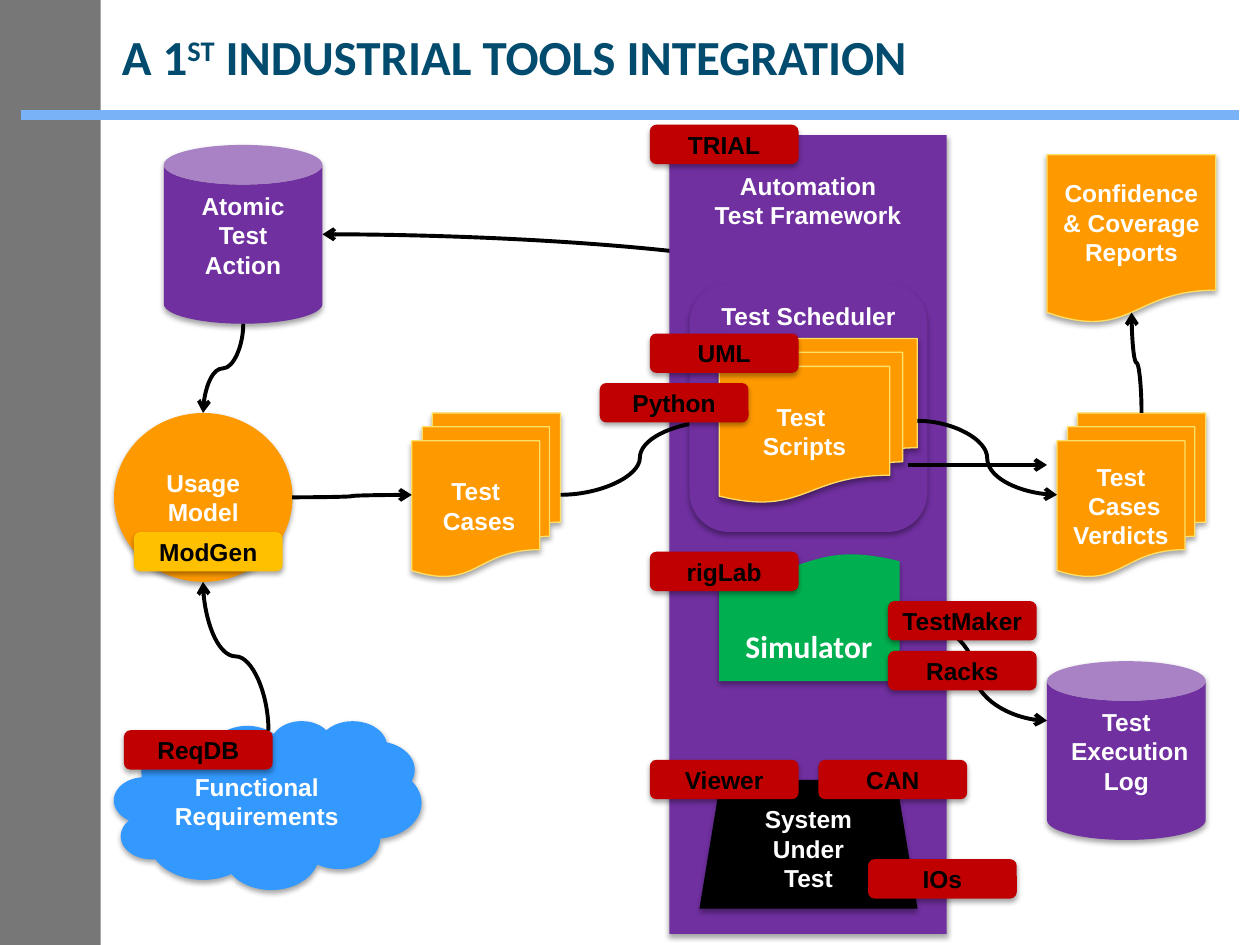
from dataclasses import dataclass
from typing import Optional

import pptx
import pptx.dml.color
import pptx.enum.shapes
import pptx.enum.text
import pptx.oxml.ns
import pptx.util
from lxml import etree

Pt = pptx.util.Pt
Shape = pptx.enum.shapes.MSO_SHAPE
Connector = pptx.enum.shapes.MSO_CONNECTOR
Anchor = pptx.enum.text.MSO_ANCHOR
Align = pptx.enum.text.PP_ALIGN
qn = pptx.oxml.ns.qn


@dataclass(frozen=True)
class Theme:
    sidebar: str = "777777"
    rule: str = "79B2F7"
    title: str = "004B6E"
    purple: str = "7030A0"
    orange: str = "FF9900"
    page_edge: str = "FFE066"
    green: str = "00B050"
    blue: str = "3399FF"
    red: str = "C00000"
    amber: str = "FFC000"
    black: str = "000000"
    white: str = "FFFFFF"
    title_size: float = 28
    simulator_size: float = 18
    label_size: float = 14
    label_font: str = "Arial"
    heading_font: str = "Calibri"


THEME = Theme()


@dataclass(frozen=True)
class Node:
    kind: int
    left: float
    top: float
    width: float
    height: float
    fill: str
    lines: tuple[str, ...] = ()
    edge: Optional[str] = None
    ink: str = THEME.white
    anchor: int = Anchor.MIDDLE
    top_inset: float = 3.6
    rotation: float = 0
    adjustment: Optional[float] = None
    shadow: bool = True


@dataclass(frozen=True)
class Flow:
    start: tuple[float, float]
    end: tuple[float, float]
    vertical: bool = False  # leaves its start vertically
    quarter: bool = False  # a single bend instead of an S


def rgb(color: str) -> pptx.dml.color.RGBColor:
    return pptx.dml.color.RGBColor.from_string(color)


def add_run(paragraph, text: str, size: float, font: str, color: str):
    run = paragraph.add_run()
    run.text = text
    run.font.size = Pt(size)
    run.font.name = font
    run.font.bold = True
    run.font.color.rgb = rgb(color)
    return run


def add_shadow(shape) -> None:
    effects = shape.element.spPr.find(qn("a:effectLst"))
    outer = etree.SubElement(effects, qn("a:outerShdw"), blurRad=str(Pt(3.1)),
                             dist=str(Pt(1.8)), dir="5400000", rotWithShape="0")
    color = etree.SubElement(outer, qn("a:srgbClr"), val=THEME.black)
    etree.SubElement(color, qn("a:alpha"), val="35000")


def draw_node(slide, node: Node) -> None:
    shape = slide.shapes.add_shape(node.kind, Pt(node.left), Pt(node.top),
                                   Pt(node.width), Pt(node.height))
    shape.rotation = node.rotation
    if node.adjustment is not None:
        shape.adjustments[0] = node.adjustment
    shape.fill.solid()
    shape.fill.fore_color.rgb = rgb(node.fill)
    if node.edge:
        shape.line.color.rgb = rgb(node.edge)
        shape.line.width = Pt(0.75)
    else:
        shape.line.fill.background()
    shape.shadow.inherit = False
    if node.shadow:
        add_shadow(shape)
    frame = shape.text_frame
    frame.word_wrap = False
    frame.vertical_anchor = node.anchor
    frame.margin_top = Pt(node.top_inset)
    for index, line in enumerate(node.lines):
        paragraph = frame.paragraphs[0] if index == 0 else frame.add_paragraph()
        paragraph.alignment = Align.CENTER
        add_run(paragraph, line, THEME.label_size, THEME.label_font, node.ink)


def style_line(connector, color: str, width: float) -> None:
    connector.line.color.rgb = rgb(color)
    connector.line.width = Pt(width)
    etree.SubElement(connector.element.spPr, qn("a:effectLst"))


def draw_flow(slide, flow: Flow) -> None:
    (x1, y1), (x2, y2) = flow.start, flow.end
    rotation = 0
    if flow.vertical:
        # A vertical departure is a horizontal curve turned about its centre
        rotation = 90 if y2 > y1 else 270
        center_x, center_y = (x1 + x2) / 2, (y1 + y2) / 2
        half_length, half_rise = abs(y2 - y1) / 2, abs(x2 - x1) / 2
        if (x2 - x1) * (y2 - y1) > 0:
            half_rise = -half_rise
        x1, x2 = center_x - half_length, center_x + half_length
        y1, y2 = center_y - half_rise, center_y + half_rise
    curve = slide.shapes.add_connector(Connector.CURVE, Pt(x1), Pt(y1), Pt(x2), Pt(y2))
    properties = curve.element.spPr
    if rotation:
        properties.find(qn("a:xfrm")).set("rot", str(rotation * 60000))
    if flow.quarter:
        properties.find(qn("a:prstGeom")).set("prst", "curvedConnector2")
    style_line(curve, THEME.black, 2.25)
    outline = properties.find(qn("a:ln"))
    etree.SubElement(outline, qn("a:tailEnd"), type="arrow")


def add_heading(slide, left: float, top: float, width: float, height: float):
    frame = slide.shapes.add_textbox(Pt(left), Pt(top), Pt(width), Pt(height)).text_frame
    frame.word_wrap = True
    frame.vertical_anchor = Anchor.MIDDLE
    return frame.paragraphs[0]


def pages(left: float, top: float, width: float, *lines: str) -> Node:
    return Node(Shape.FLOWCHART_MULTIDOCUMENT, left, top, width, 93.6,
                THEME.orange, lines, edge=THEME.page_edge)


def store(left: float, top: float, *lines: str) -> Node:
    return Node(Shape.CAN, left, top, 90.7, 102.2, THEME.purple, lines, anchor=Anchor.TOP)


def tool(left: float, top: float, name: str, fill: str = THEME.red) -> Node:
    return Node(Shape.ROUNDED_RECTANGLE, left, top, 85, 22.5, fill, (name,), ink=THEME.black)


# Flows that start behind the test framework
HIDDEN_FLOWS = (
    Flow((514, 352), (598.3, 411.8)),
    Flow((462.2, 162), (184.3, 133.9), vertical=True, quarter=True),
)
NODES = (
    Node(Shape.RECTANGLE, 382.5, 77.2, 158.5, 456.5, THEME.purple,
         ("Automation", "Test Framework"), anchor=Anchor.TOP, top_inset=20.5),
    Node(Shape.OVAL, 65.2, 236, 102, 96.5, THEME.orange, ("Usage", "Model")),
    pages(235.3, 236, 85, "Test", " Cases"),
    Node(Shape.FLOWCHART_DOCUMENT, 411, 315.8, 103, 73.4, THEME.green, rotation=180),
    Node(Shape.TRAPEZOID, 399.7, 445.7, 124.6, 73.5, THEME.black,
         ("System", "Under", "Test"), adjustment=0.165),
    store(598.3, 377.8, "Test", " Execution", "Log"),
    pages(604, 236, 85, "Test", " Cases", "Verdicts"),
    Node(Shape.FLOWCHART_DOCUMENT, 598.3, 88.5, 96.5, 96.5, THEME.orange,
         ("Confidence", "& Coverage", "Reports"), edge=THEME.page_edge),
    Node(Shape.CLOUD, 65.2, 411.8, 175.7, 96.5, THEME.blue, ("Functional", "Requirements")),
    store(93.6, 82.8, "Atomic", "Test", "Action"),
)
MODEL_FLOWS = (
    Flow((139, 185), (116, 236), vertical=True),
    Flow((153.4, 417.6), (116, 332.6), vertical=True),
    Flow((167, 284.2), (235.3, 282.8)),
    Flow((320.4, 282.8), (411, 240.5)),
)
SCHEDULER_NODES = (
    Node(Shape.ROUNDED_RECTANGLE, 394, 162, 136, 142, THEME.purple,
         ("Test Scheduler",), anchor=Anchor.TOP),
    pages(411, 193.5, 113.2, "Test ", "Scripts"),
)
RESULT_FLOWS = (
    Flow((524.2, 240.5), (604, 282.8)),
    Flow((652.3, 236), (646.6, 178.6), vertical=True),
    Flow((518.7, 265.7), (598.3, 265.7)),
)
TOOLS = (
    tool(371.3, 71.3, "TRIAL"),
    tool(371.3, 190.6, "UML"),
    tool(342.7, 218.9, "Python"),
    tool(371.3, 315.3, "rigLab"),
    tool(507.4, 343.5, "TestMaker"),
    tool(507.4, 372, "Racks"),
    tool(371.3, 434.2, "Viewer"),
    tool(467.7, 434.2, "CAN"),
    tool(496, 491, "IOs"),
    tool(70.8, 417.3, "ReqDB"),
    tool(76.5, 304, "ModGen", THEME.amber),
)


def main() -> None:
    deck = pptx.Presentation()
    deck.slide_width, deck.slide_height = Pt(720), Pt(540)
    slide = deck.slides.add_slide(deck.slide_layouts[6])

    # Sidebar, rule and title
    draw_node(slide, Node(Shape.RECTANGLE, 0, 0, 57.6, 540, THEME.sidebar, shadow=False))
    rule = slide.shapes.add_connector(Connector.STRAIGHT, Pt(12.2), Pt(65.7), Pt(707.8), Pt(65.7))
    style_line(rule, THEME.rule, 6)
    title = add_heading(slide, 62.6, 9.4, 501, 45.4)
    for text, baseline in (("A 1", 0), ("ST", 30000), (" INDUSTRIAL TOOLS INTEGRATION", 0)):
        run = add_run(title, text, THEME.title_size, THEME.heading_font, THEME.title)
        if baseline:
            run.font._element.set("baseline", str(baseline))

    # Process, from back to front
    for flow in HIDDEN_FLOWS:
        draw_flow(slide, flow)
    for node in NODES:
        draw_node(slide, node)
    simulator = add_heading(slide, 416.9, 354.5, 90.7, 29)
    simulator.alignment = Align.CENTER
    add_run(simulator, "Simulator", THEME.simulator_size, THEME.heading_font, THEME.white)
    for flow in MODEL_FLOWS:
        draw_flow(slide, flow)
    for node in SCHEDULER_NODES:
        draw_node(slide, node)
    for flow in RESULT_FLOWS:
        draw_flow(slide, flow)

    # Tool tags
    for tag in TOOLS:
        draw_node(slide, tag)

    deck.save("out.pptx")


if __name__ == "__main__":
    main()
